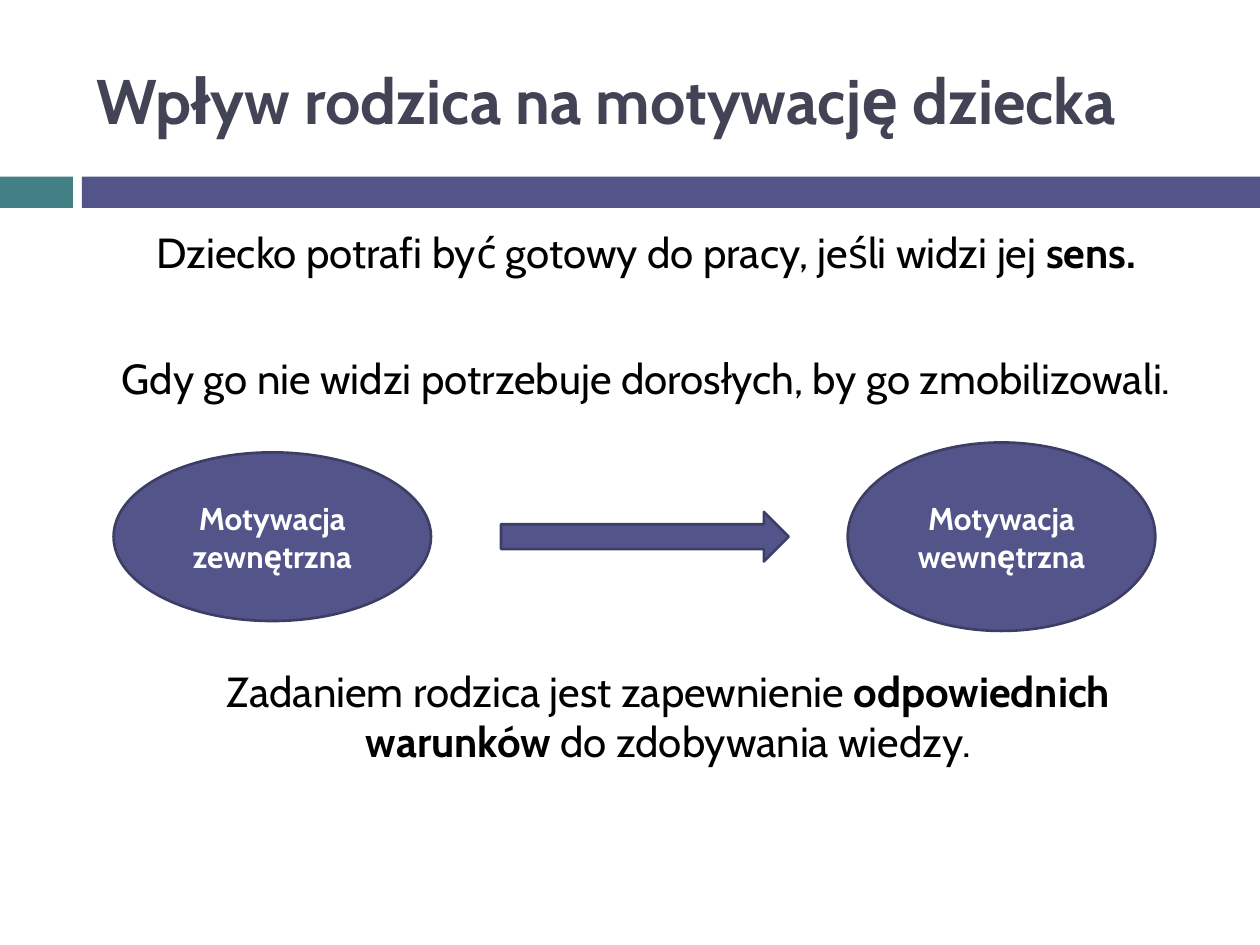
from typing import NamedTuple

from pptx import Presentation
from pptx.dml.color import RGBColor
from pptx.enum.shapes import MSO_SHAPE as Preset
from pptx.enum.text import MSO_ANCHOR as Anchor, PP_ALIGN as Align
from pptx.util import Cm, Pt

FONT = "Cabin"
VIOLET, DARK_VIOLET, TEAL = "53548A", "3D3E66", "438086"
TITLE_COLOR, BLACK, WHITE = "424456", "000000", "FFFFFF"


class Box(NamedTuple):
    """Left, top, width and height in centimetres."""
    left: float
    top: float
    width: float
    height: float

    def lengths(self) -> list:
        return [Cm(value) for value in self]


class Figure(NamedTuple):
    preset: Preset
    box: Box
    fill: str
    line: str | None = None
    text: str = ""


class Statement(NamedTuple):
    runs: tuple[tuple[str, bool], ...]
    space_before: float
    indent: float = 0


TITLE_BOX = Box(1.7, 0.64, 22.66, 2.74)
BODY_BOX = Box(1.7, 4.45, 22.66, 12.5)

FIGURES = [
    Figure(Preset.RECTANGLE, Box(0, 3.56, 1.47, 0.63), TEAL),
    Figure(Preset.RECTANGLE, Box(1.65, 3.56, 23.75, 0.63), VIOLET),
    Figure(Preset.FLOWCHART_CONNECTOR, Box(2.29, 9.12, 6.4, 3.4), VIOLET, DARK_VIOLET,
           "Motywacja zewnętrzna"),
    Figure(Preset.FLOWCHART_CONNECTOR, Box(17.09, 8.92, 6.2, 3.8), VIOLET, DARK_VIOLET,
           "Motywacja wewnętrzna"),
    Figure(Preset.RIGHT_ARROW, Box(10.1, 10.32, 5.8, 1), VIOLET, DARK_VIOLET),
]

STATEMENTS = [
    Statement((("Dziecko potrafi być gotowy do pracy, jeśli widzi jej ", False),
               ("sens.", True)), 7),
    Statement((("Gdy go nie widzi potrzebuje dorosłych, by go zmobilizowali.", False),), 43),
    Statement((("Zadaniem rodzica jest zapewnienie ", False),
               ("odpowiednich warunków ", True),
               ("do zdobywania wiedzy.", False)), 150, indent=0.89),
]


def rgb(color: str) -> RGBColor:
    return RGBColor.from_string(color)


def add_text(paragraph, text: str, *, size: float, color: str, bold: bool = False,
             align: Align = Align.CENTER) -> None:
    paragraph.alignment = align
    run = paragraph.add_run()
    run.text = text
    run.font.name = FONT
    run.font.size = Pt(size)
    run.font.bold = bold
    run.font.color.rgb = rgb(color)


def add_figure(slide, figure: Figure) -> None:
    shape = slide.shapes.add_shape(figure.preset, *figure.box.lengths())
    shape.shadow.inherit = False
    shape.fill.solid()
    shape.fill.fore_color.rgb = rgb(figure.fill)
    if figure.line:
        shape.line.color.rgb = rgb(figure.line)
        shape.line.width = Pt(1.5)
    else:
        shape.line.fill.background()
    if figure.text:
        frame = shape.text_frame
        frame.word_wrap = True
        frame.vertical_anchor = Anchor.MIDDLE
        add_text(frame.paragraphs[0], figure.text, size=18, color=WHITE, bold=True)


def set_title(slide, text: str) -> None:
    title = slide.shapes.title
    title.left, title.top, title.width, title.height = TITLE_BOX.lengths()
    title.text_frame.vertical_anchor = Anchor.MIDDLE
    add_text(title.text_frame.paragraphs[0], text, size=36, color=TITLE_COLOR,
             bold=True, align=Align.LEFT)


def add_statements(slide, statements: list[Statement]) -> None:
    frame = slide.shapes.add_textbox(*BODY_BOX.lengths()).text_frame
    frame.word_wrap = True
    for number, statement in enumerate(statements):
        paragraph = frame.add_paragraph() if number else frame.paragraphs[0]
        paragraph.space_before = Pt(statement.space_before)
        if statement.indent:
            paragraph._p.get_or_add_pPr().set("marL", str(Cm(statement.indent)))
        for text, bold in statement.runs:
            add_text(paragraph, text, size=24, color=BLACK, bold=bold)


def main() -> None:
    presentation = Presentation()
    presentation.slide_width, presentation.slide_height = Cm(25.4), Cm(19.05)
    slide = presentation.slides.add_slide(presentation.slide_layouts[5])
    set_title(slide, "Wpływ rodzica na motywację dziecka")
    add_statements(slide, STATEMENTS)
    for figure in FIGURES:
        add_figure(slide, figure)
    presentation.save("out.pptx")


if __name__ == "__main__":
    main()
